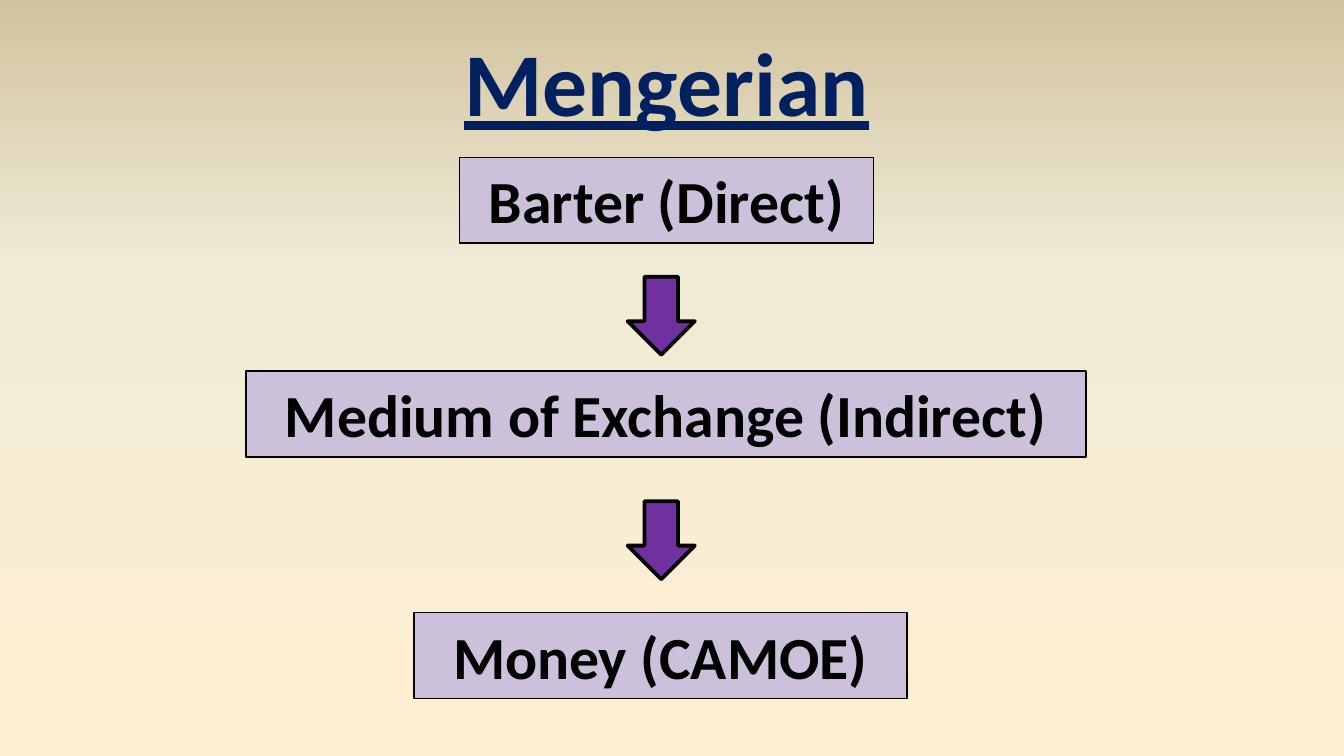
from copy import deepcopy

from pptx import Presentation
from pptx.dml.color import RGBColor
from pptx.enum.shapes import MSO_SHAPE as Preset
from pptx.enum.text import MSO_ANCHOR as Anchor, MSO_AUTO_SIZE as AutoSize, PP_ALIGN as Align
from pptx.util import Inches, Pt

COLORS = {
    "title": "002060",
    "text": "000000",
    "line": "000000",
    "stage": "CCC1DA",
    "arrow": "7030A0",
}
BACKDROP = [(0, "FFEFD1"), (0.65, "F0EBD5"), (1, "D1C39F")]

SLIDE_WIDTH = Inches(10)
SLIDE_HEIGHT = SLIDE_WIDTH * 9 // 16

STAGE_HEIGHT = 0.64
STAGES = [
    ("Barter (Direct)", 3.42, 1.17, 3.08),
    ("Medium of Exchange (Indirect)", 1.83, 2.76, 6.25),
    ("Money (CAMOE)", 3.08, 4.56, 3.67),
]
ARROW_LEFT, ARROW_WIDTH, ARROW_HEIGHT = 4.67, 0.5, 0.58
ARROW_TOPS = [2.06, 3.73]


def rgb(name):
    return RGBColor.from_string(COLORS[name])


def paint_background(slide):
    """Fill the slide with a three-stop gradient that runs upwards."""
    fill = slide.background.fill
    fill.gradient()
    fill.gradient_angle = 90
    stop_list = slide.element.xpath(".//a:gsLst")[0]
    stop_list.append(deepcopy(stop_list[-1]))
    for stop, (position, color) in zip(fill.gradient_stops, BACKDROP):
        stop.position = position
        stop.color.rgb = RGBColor.from_string(color)


def write_centered(shape, wording, color, **font_format):
    frame = shape.text_frame
    frame.text = wording
    frame.auto_size = AutoSize.SHAPE_TO_FIT_TEXT
    frame.vertical_anchor = Anchor.TOP
    paragraph = frame.paragraphs[0]
    paragraph.alignment = Align.CENTER
    font = paragraph.runs[0].font
    font.color.rgb = rgb(color)
    for key, value in {"name": "Calibri", "bold": True, **font_format}.items():
        setattr(font, key, value)


def add_title(slide, wording):
    title = slide.shapes.title
    place = {"left": 3.34, "top": 0.15, "width": 3.24, "height": 0.91}
    for key, value in place.items():
        setattr(title, key, Inches(value))
    write_centered(title, wording, "title", size=Pt(48), underline=True)
    title.text_frame.word_wrap = False


def add_outlined(slide, preset, place, fill, line_width):
    shape = slide.shapes.add_shape(preset, *map(Inches, place))
    shape.shadow.inherit = False
    shape.fill.solid()
    shape.fill.fore_color.rgb = rgb(fill)
    shape.line.color.rgb = rgb("line")
    shape.line.width = Pt(line_width)
    return shape


def add_stage(slide, wording, left, top, width):
    place = (left, top, width, STAGE_HEIGHT)
    stage = add_outlined(slide, Preset.RECTANGLE, place, "stage", 0.75)
    write_centered(stage, wording, "text", size=Pt(32))


def add_arrow(slide, top):
    place = (ARROW_LEFT, top, ARROW_WIDTH, ARROW_HEIGHT)
    add_outlined(slide, Preset.DOWN_ARROW, place, "arrow", 2)


def main():
    deck = Presentation()
    deck.slide_width, deck.slide_height = SLIDE_WIDTH, SLIDE_HEIGHT
    slide = deck.slides.add_slide(deck.slide_layouts[5])
    paint_background(slide)
    add_title(slide, "Mengerian")
    for stage in STAGES:
        add_stage(slide, *stage)
    for top in ARROW_TOPS:
        add_arrow(slide, top)
    deck.save("out.pptx")


if __name__ == "__main__":
    main()
